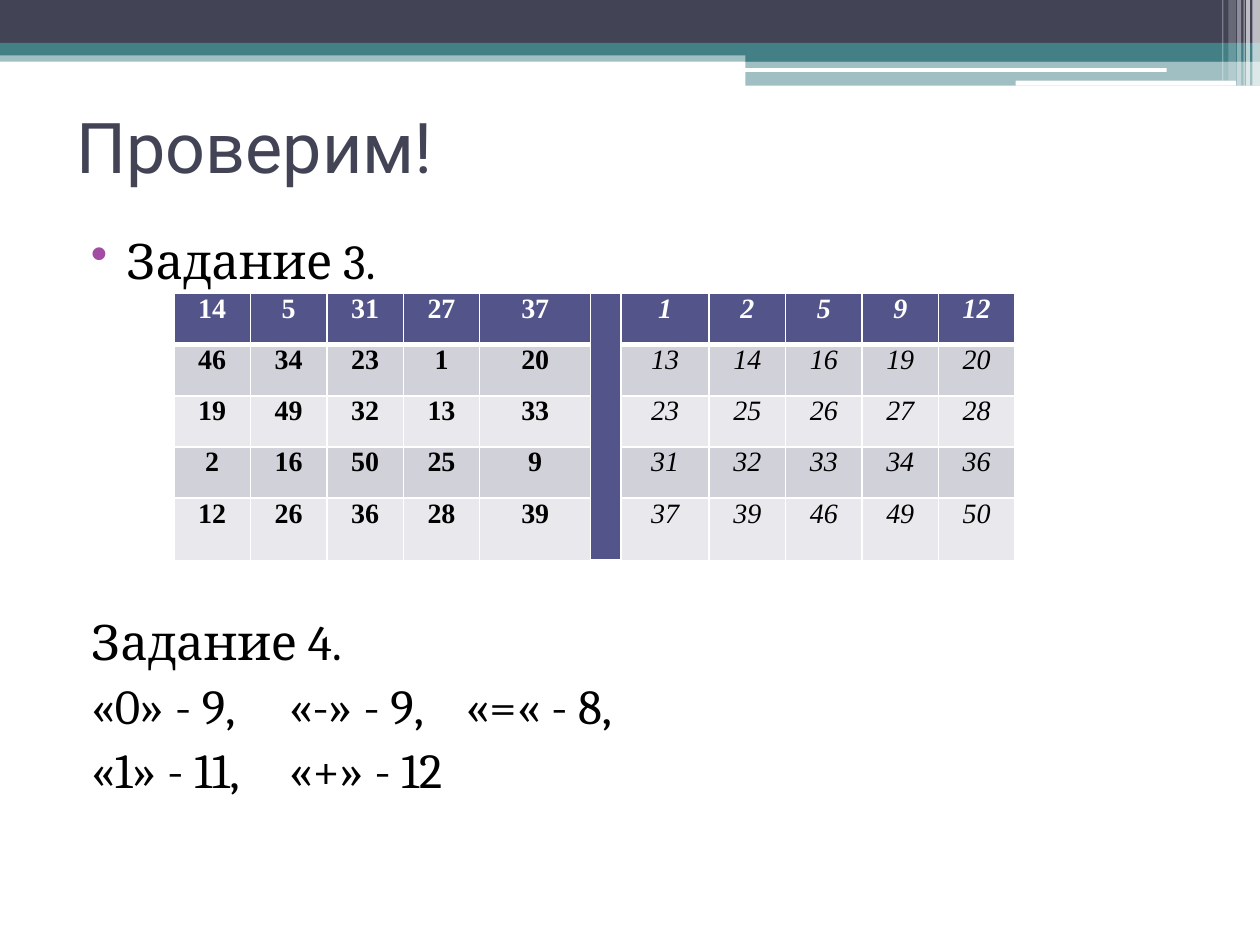
from lxml.etree import SubElement
from pptx import Presentation
from pptx.dml.color import RGBColor
from pptx.enum.shapes import MSO_SHAPE
from pptx.enum.text import MSO_ANCHOR, PP_ALIGN
from pptx.oxml.ns import qn
from pptx.util import Pt

THEME = {
    "dark": "424456", "teal": "438086", "white": "FFFFFF", "black": "000000",
    "bullet": "A04DA3", "header": "53548A", "bands": ("D1D1DA", "E9E9ED"),
    "title_font": "Roboto", "body_font": "Cambria", "table_font": "Times New Roman",
    "title_size": 40, "body_size": 28, "table_size": 16,
}

TITLE = "Проверим!"
# text, space before, bullet
BODY = [
    ("Задание 3.", 0, "•"),
    ("Задание 4.", 184, None),
    ("«0» - 9,\t«-» - 9,\t«=« - 8,", 3, None),
    ("«1» - 11,\t«+» - 12", 3, None),
]
TAB_STOPS = (113, 214)
BULLET_INDENT = 20.16

SHUFFLED = [
    (14, 5, 31, 27, 37),
    (46, 34, 23, 1, 20),
    (19, 49, 32, 13, 33),
    (2, 16, 50, 25, 9),
    (12, 26, 36, 28, 39),
]
SORTED_NUMBERS = sorted(number for row in SHUFFLED for number in row)
DIVIDER = 5
COLUMN_WIDTHS = [43.7] * 4 + [63.4, 17.3, 50.4] + [43.7] * 4
ROW_HEIGHTS = [29.2] * 4 + [36]

# left, top, width, height, colour, opacity in percent, shape
RECT, ROUND = MSO_SHAPE.RECTANGLE, MSO_SHAPE.ROUNDED_RECTANGLE
BANNER = [
    (0, 28.8, 720, 6.5, "teal", 50, RECT),
    (0, 0, 720, 24.5, "dark", 100, RECT),
    (0, 24.5, 720, 7.2, "teal", 100, RECT),
    (426, 28.1, 294, 7.2, "teal", 100, RECT),
    (426, 34.6, 294, 14.4, "teal", 50, RECT),
    (425.5, 38.9, 241.2, 2.2, "white", 100, ROUND),
    (580.3, 46.1, 126, 2.9, "white", 100, ROUND),
]
# left, width, height, opacity of the white bars at the right edge
EDGE_BARS = [
    (715.7, 4.3, 49, 65), (712.1, 2.2, 49, 65), (710.6, 0.7, 49, 60),
    (707, 2.2, 49, 40), (702, 4.3, 46.1, 20), (698.4, 0.7, 46.1, 30),
]


def colour(name):
    return RGBColor.from_string(THEME.get(name, name))


def write(para, text, *, font, size, ink="black", bold=False, italic=False):
    span = para.add_run()
    span.text = text
    span.font.name = font
    span.font.size = Pt(size)
    span.font.color.rgb = colour(ink)
    span.font.bold, span.font.italic = bold, italic


def add_banner(page):
    bars = BANNER + [(left, 0, width, height, "white", opacity, RECT)
                     for left, width, height, opacity in EDGE_BARS]
    for left, top, width, height, fill, opacity, kind in bars:
        bar = page.shapes.add_shape(kind, Pt(left), Pt(top), Pt(width), Pt(height))
        bar.shadow.inherit = False
        bar.line.fill.background()
        bar.fill.solid()
        bar.fill.fore_color.rgb = colour(fill)
        if opacity < 100:
            tint = bar.fill._xPr.find(".//" + qn("a:srgbClr"))
            SubElement(tint, qn("a:alpha"), val=str(opacity * 1000))


def add_title(page):
    title = page.shapes.title
    title.left, title.top, title.width, title.height = Pt(36.7), Pt(54.7), Pt(648), Pt(56.9)
    title.text_frame.vertical_anchor = MSO_ANCHOR.MIDDLE
    para = title.text_frame.paragraphs[0]
    para.alignment = PP_ALIGN.LEFT
    write(para, TITLE, font=THEME["title_font"], size=THEME["title_size"], ink="dark")


def set_bullet(para, mark):
    properties = para._p.get_or_add_pPr()
    properties.set("marL", str(Pt(BULLET_INDENT)))
    properties.set("indent", str(-Pt(BULLET_INDENT)))
    tint = SubElement(properties, qn("a:buClr"))
    SubElement(tint, qn("a:srgbClr"), val=THEME["bullet"])
    SubElement(properties, qn("a:buChar"), char=mark)


def set_tabs(para):
    tabs = SubElement(para._p.get_or_add_pPr(), qn("a:tabLst"))
    for stop in TAB_STOPS:
        SubElement(tabs, qn("a:tab"), pos=str(Pt(stop)), algn="l")


def add_body(page):
    box = page.shapes.add_textbox(Pt(36), Pt(128.2), Pt(648), Pt(389.5))
    frame = box.text_frame
    frame.word_wrap = True
    frame.margin_left = Pt(16)
    for index, (text, gap, bullet) in enumerate(BODY):
        para = frame.add_paragraph() if index else frame.paragraphs[0]
        para.space_before = Pt(gap)
        if bullet:
            set_bullet(para, bullet)
        if "\t" in text:
            set_tabs(para)
        write(para, text, font=THEME["body_font"], size=THEME["body_size"])


def set_borders(cell, **widths):
    properties = cell._tc.get_or_add_tcPr()
    for side in ("L", "R", "T", "B"):
        line = SubElement(properties, qn("a:ln" + side), w=str(Pt(widths.get(side, 1))))
        fill = SubElement(line, qn("a:solidFill"))
        SubElement(fill, qn("a:srgbClr"), val=THEME["white"])


def add_number_table(page):
    frame = page.shapes.add_table(len(ROW_HEIGHTS), len(COLUMN_WIDTHS), Pt(99.4), Pt(167.8),
                                  Pt(sum(COLUMN_WIDTHS)), Pt(sum(ROW_HEIGHTS)))
    table = frame.table
    for column, width in zip(table.columns, COLUMN_WIDTHS):
        column.width = Pt(width)
    for row, height in zip(table.rows, ROW_HEIGHTS):
        row.height = Pt(height)
    for r, shuffled in enumerate(SHUFFLED):
        ordered = SORTED_NUMBERS[r * DIVIDER:(r + 1) * DIVIDER]
        for c, number in enumerate([*shuffled, "", *ordered]):
            cell = table.cell(r, c)
            header = r == 0
            set_borders(cell, **({"B": 3} if header else {"T": 3} if r == 1 else {}))
            cell.fill.solid()
            cell.fill.fore_color.rgb = colour(
                "header" if header or c == DIVIDER else THEME["bands"][(r - 1) % 2])
            cell.margin_left = cell.margin_right = Pt(5)
            cell.margin_top = cell.margin_bottom = 0
            para = cell.text_frame.paragraphs[0]
            para.alignment = PP_ALIGN.CENTER
            if c != DIVIDER:
                write(para, str(number), font=THEME["table_font"], size=THEME["table_size"],
                      ink="white" if header else "black",
                      bold=header or c < DIVIDER, italic=c > DIVIDER)
    table.cell(0, DIVIDER).merge(table.cell(len(SHUFFLED) - 1, DIVIDER))


def main():
    deck = Presentation()
    deck.slide_width, deck.slide_height = Pt(720), Pt(540)
    page = deck.slides.add_slide(deck.slide_layouts[5])
    add_banner(page)
    add_title(page)
    add_body(page)
    add_number_table(page)
    deck.save("out.pptx")


if __name__ == "__main__":
    main()
